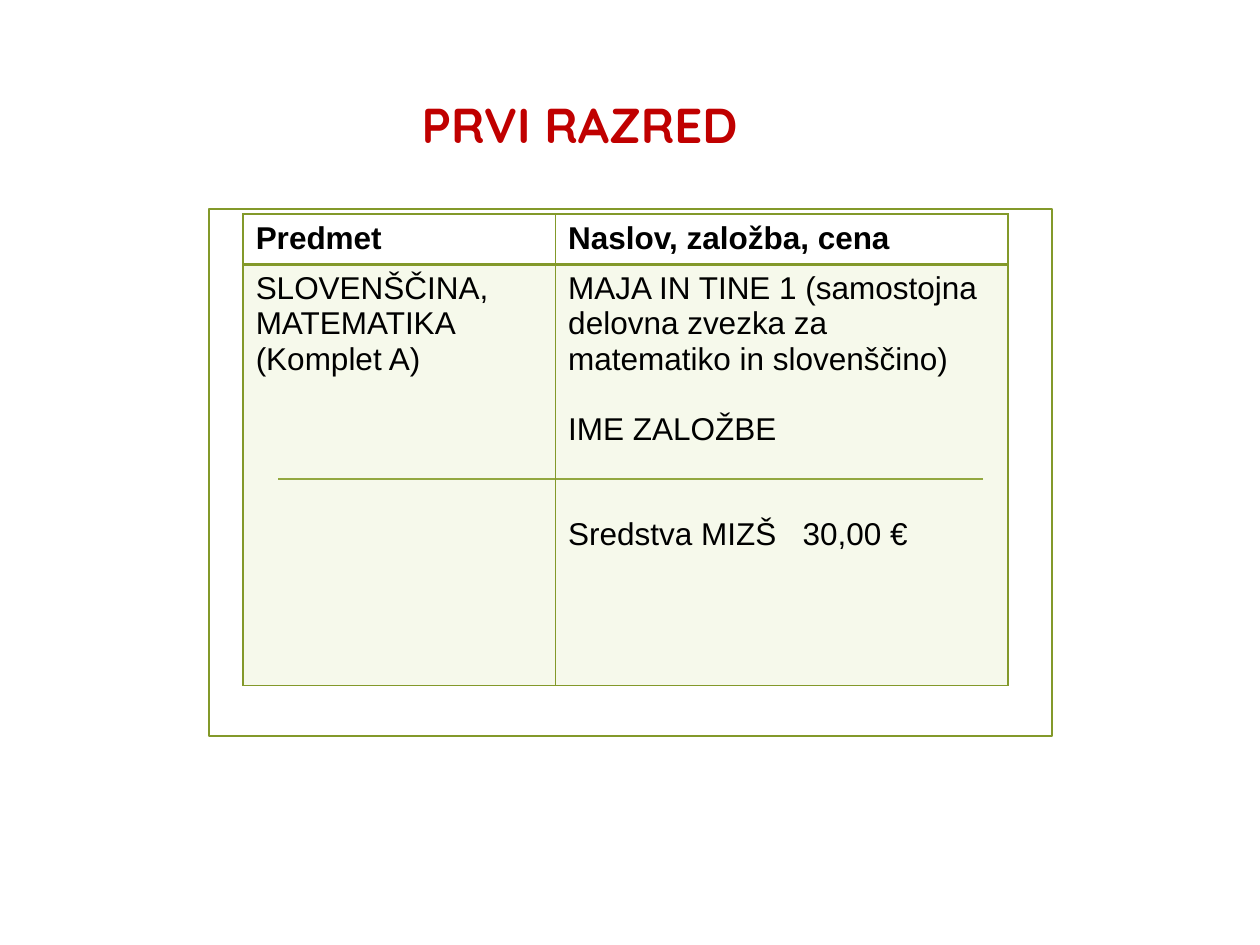
import pptx
import pptx.dml.color
import pptx.enum.shapes
import pptx.enum.text
import pptx.oxml
import pptx.oxml.ns
import pptx.util
from pptx.util import Inches

GREEN = "83992A"
PALE_GREEN = "D6E49C"
RED = "C00000"
BLACK = "000000"
LINE_HEIGHT = 20  # points, one line of table text


def color(hex_string):
    return pptx.dml.color.RGBColor.from_string(hex_string)


def add_element(parent, tag, index=None, **attributes):
    element = pptx.oxml.parse_xml(
        f'<{tag} {pptx.oxml.ns.nsdecls("a")}/>')
    for name, value in attributes.items():
        element.set(name, str(value))
    parent.insert(len(parent) if index is None else index, element)
    return element


def write_text(text_frame, text, size=18, font="Arial", fill=BLACK, bold=False,
               align=None, space_before=0, tab=None):
    """Fill the empty first paragraph, or add one after the existing text."""
    if text_frame.text:
        paragraph = text_frame.add_paragraph()
    else:
        paragraph = text_frame.paragraphs[0]
    if tab is not None:
        properties = paragraph._p.get_or_add_pPr()
        tab_list = add_element(properties, "a:tabLst")
        add_element(tab_list, "a:tab", pos=Inches(tab), algn="l")
    if space_before:
        paragraph.space_before = pptx.util.Pt(space_before)
    paragraph.alignment = align
    run = paragraph.add_run()
    run.text = text
    run.font.size = pptx.util.Pt(size)
    run.font.name = font
    run.font.bold = bold
    run.font.color.rgb = color(fill)


def add_title(slide, left, top, width, height):
    title = slide.shapes.title
    title.left, title.top = Inches(left), Inches(top)
    title.width, title.height = Inches(width), Inches(height)
    title.text_frame.vertical_anchor = pptx.enum.text.MSO_ANCHOR.TOP
    write_text(title.text_frame, "PRVI RAZRED", size=28, font="Quicksand",
               fill=RED, bold=True, align=pptx.enum.text.PP_ALIGN.CENTER)


def add_frame(slide, left, top, width, height):
    """Outlined box with a horizontal rule across it."""
    frame = slide.shapes.add_shape(
        pptx.enum.shapes.MSO_SHAPE.RECTANGLE,
        Inches(left), Inches(top), Inches(width), Inches(height))
    frame.shadow.inherit = False
    frame.fill.background()
    rule_y = Inches(top + 2.14)
    rule = slide.shapes.add_connector(
        pptx.enum.shapes.MSO_CONNECTOR.STRAIGHT,
        Inches(left + 0.55), rule_y, Inches(left + width - 0.55), rule_y)
    add_element(rule._element.spPr, "a:effectLst")
    for shape in (frame, rule):
        shape.line.color.rgb = color(GREEN)
        shape.line.width = pptx.util.Pt(1.25)


def set_borders(cell, **widths):
    properties = cell._tc.get_or_add_tcPr()
    for index, side in enumerate("LRTB"):
        border = add_element(properties, f"a:ln{side}", index,
                             w=pptx.util.Pt(widths.get(side, 1)))
        fill = add_element(border, "a:solidFill")
        add_element(fill, "a:srgbClr", val=GREEN)


def fill_translucent(cell, hex_string, percent):
    cell.fill.solid()
    cell.fill.fore_color.rgb = color(hex_string)
    value = cell._tc.tcPr.find(".//" + pptx.oxml.ns.qn("a:solidFill") + "/"
                               + pptx.oxml.ns.qn("a:srgbClr"))
    add_element(value, "a:alpha", val=percent * 1000)


def add_book_table(slide, left, top, column_widths, row_heights):
    table = slide.shapes.add_table(
        len(row_heights), len(column_widths), Inches(left), Inches(top),
        Inches(sum(column_widths)), Inches(sum(row_heights))).table
    table.first_row = table.horz_banding = False
    for column, width in zip(table.columns, column_widths):
        column.width = Inches(width)
    for row, height in zip(table.rows, row_heights):
        row.height = Inches(height)

    headings = ["Predmet", "Naslov, založba, cena"]
    bodies = [
        [("SLOVENŠČINA,", {}), ("MATEMATIKA", {}), ("(Komplet A)", {})],
        [("MAJA IN TINE 1 (samostojna delovna zvezka za matematiko in "
          "slovenščino)", {}),
         ("IME ZALOŽBE", {"space_before": LINE_HEIGHT}),
         ("Sredstva MIZŠ\t30,00 €",
          {"space_before": 2 * LINE_HEIGHT, "tab": 1.86})],
    ]
    for index, (heading, body) in enumerate(zip(headings, bodies)):
        header_cell, body_cell = table.cell(0, index), table.cell(1, index)
        header_cell.fill.background()
        set_borders(header_cell, B=2)
        write_text(header_cell.text_frame, heading, bold=True)
        # Fill before borders, so that the fill lookup meets only the cell fill
        fill_translucent(body_cell, PALE_GREEN, 20)
        set_borders(body_cell, T=2)
        for text, text_format in body:
            write_text(body_cell.text_frame, text, **text_format)


def main():
    presentation = pptx.Presentation()
    presentation.slide_width = Inches(10)
    presentation.slide_height = Inches(7.5)
    slide = presentation.slides.add_slide(presentation.slide_layouts[5])
    add_title(slide, 2.55, 0.7, 4.1, 0.57)
    add_frame(slide, 1.66, 1.66, 6.69, 4.18)
    add_book_table(slide, 1.93, 1.7, [2.48, 3.59], [0.4, 3.34])
    presentation.save("out.pptx")


if __name__ == "__main__":
    main()
